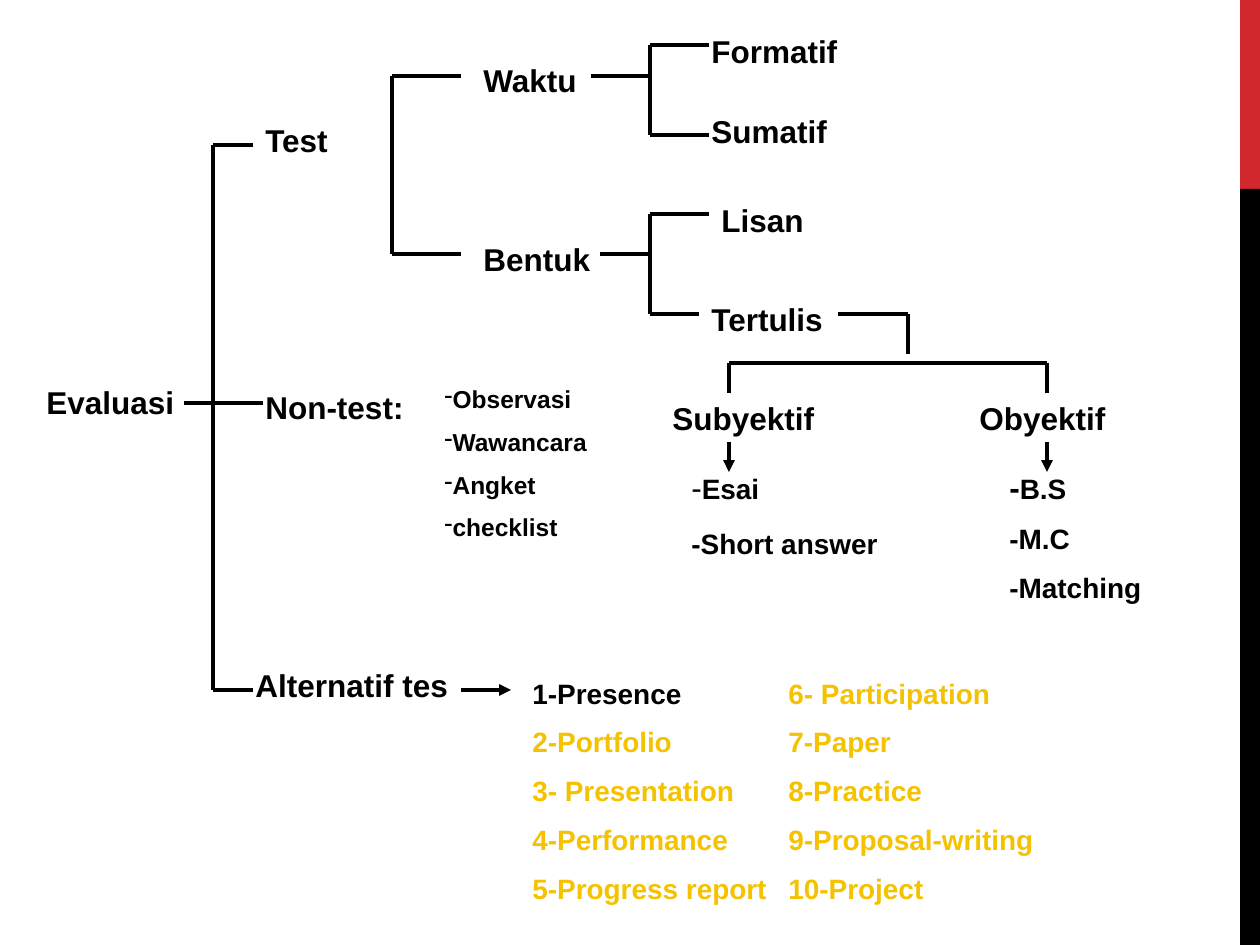
from lxml.etree import SubElement
from pptx import Presentation
from pptx.dml.color import RGBColor
from pptx.enum.shapes import MSO_CONNECTOR, MSO_SHAPE
from pptx.enum.text import MSO_ANCHOR
from pptx.oxml.ns import qn
from pptx.util import Pt

PX = 914400 / 126
COLORS = {"text": "000000", "accent": "D1282E", "bar": "000000", "gold": "F5C201"}


def emu(*lengths):
    return [round(length * PX) for length in lengths]


def add_text(slide, area, lines, size, gap=0):
    """Add bold lines, each a list of span texts, and return the paragraphs."""
    box = slide.shapes.add_textbox(*emu(*area))
    frame = box.text_frame
    frame.word_wrap = True
    frame.vertical_anchor = MSO_ANCHOR.TOP
    for index, pieces in enumerate(lines):
        para = frame.add_paragraph() if index else frame.paragraphs[0]
        if index:
            para.space_before = Pt(gap)
        for piece in pieces:
            span = para.add_run()
            span.text = piece
            span.font.name = "Arial"
            span.font.size = Pt(size)
            span.font.bold = True
            span.font.color.rgb = RGBColor.from_string(COLORS["text"])
    return frame.paragraphs


deck = Presentation()
deck.slide_width, deck.slide_height = emu(1260, 945)
slide = deck.slides.add_slide(deck.slide_layouts[6])

# Side bar
for color, top, height in [("accent", 0, 189), ("bar", 189, 756)]:
    bar = slide.shapes.add_shape(MSO_SHAPE.RECTANGLE, *emu(1240, top, 20, height))
    bar.shadow.inherit = False
    bar.fill.solid()
    bar.fill.fore_color.rgb = RGBColor.from_string(COLORS[color])
    bar.line.fill.background()

# Tree nodes: text, left, top, width
nodes = [
    ("Evaluasi", 34, 377, 198),
    ("Test", 253, 115, 129),
    ("Non-test:", 253, 382, 169),
    ("Alternatif tes", 243, 660, 218),
    ("Waktu", 471, 55, 179),
    ("Bentuk", 471, 234, 159),
    ("Formatif", 699, 26, 189),
    ("Sumatif", 699, 106, 218),
    ("Lisan", 709, 195, 149),
    ("Tertulis", 699, 294, 198),
    ("Subyektif", 660, 393, 169),
    ("Obyektif", 967, 393, 208),
]
for label, left, top, width in nodes:
    add_text(slide, (left, top, width, 50), [[label]], 18)

# Lists under the nodes
methods = [["Observasi"], ["Wawancara"], ["Angket"], ["checklist"]]
for para in add_text(slide, (432, 378, 208, 174), methods, 14, 7.6):
    bullet = SubElement(para._p.get_or_add_pPr(), qn("a:buChar"))
    bullet.set("char", "-")

essay = add_text(slide, (679, 462, 238, 107), [["-", "Esai"], ["-Short answer"]], 16, 12)
essay[0].runs[0].font.size = Pt(18)
essay[0].runs[0].font.bold = False

objective = [["-", "B.S"], ["-M.C"], ["-Matching"]]
choice = add_text(slide, (997, 462, 169, 208), objective, 16, 8.7)
choice[0].runs[0].font.size = Pt(18)

alternatives = [
    ["1-Presence", "\t6- Participation"],
    ["2-Portfolio", "\t7-Paper"],
    ["3- Presentation", "\t8-Practice"],
    ["4-Performance", "\t9-Proposal-writing"],
    ["5-Progress report", "\t10-Project"],
]
for row, para in enumerate(add_text(slide, (520, 670, 566, 248), alternatives, 16, 8.7)):
    tabs = SubElement(para._p.get_or_add_pPr(), qn("a:tabLst"))
    tab = SubElement(tabs, qn("a:tab"))
    tab.set("pos", str(emu(256)[0]))
    tab.set("algn", "l")
    for span in para.runs[0 if row else 1:]:
        span.font.color.rgb = RGBColor.from_string(COLORS["gold"])

# Branches: start x, start y, end x, end y
lines = [
    (213, 145, 213, 690), (213, 145, 253, 145), (213, 690, 253, 690), (184, 403, 263, 403),
    (392, 76, 392, 254), (392, 76, 461, 76), (392, 254, 461, 254),
    (650, 45, 650, 135), (591, 76, 650, 76), (650, 45, 709, 45), (650, 135, 709, 135),
    (650, 214, 650, 314), (600, 254, 650, 254), (650, 214, 709, 214), (650, 314, 699, 314),
    (838, 314, 908, 314), (908, 314, 908, 354),
    (729, 363, 1047, 363), (729, 363, 729, 393), (1047, 363, 1047, 393),
]
arrows = [(729, 442, 729, 472), (1047, 442, 1047, 472), (461, 690, 511, 690)]
for ends in lines + arrows:
    branch = slide.shapes.add_connector(MSO_CONNECTOR.STRAIGHT, *emu(*ends))
    branch.line.width = Pt(2.25)
    branch.line.color.rgb = RGBColor.from_string(COLORS["text"])
    if ends in arrows:
        SubElement(branch.line._get_or_add_ln(), qn("a:tailEnd")).set("type", "triangle")
    SubElement(branch._element.spPr, qn("a:effectLst"))

deck.save("out.pptx")
